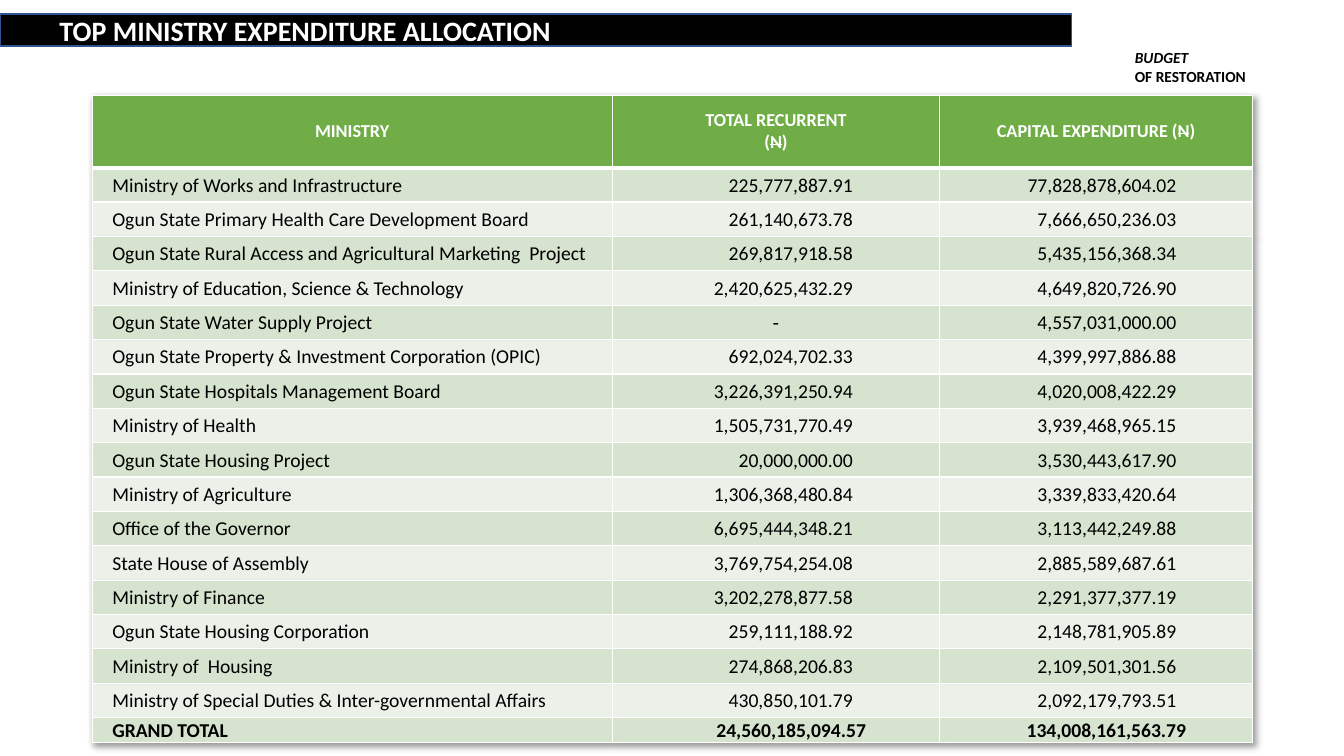
import pptx
import pptx.dml.color
import pptx.enum.shapes
import pptx.enum.text
import pptx.oxml
import pptx.oxml.ns
import pptx.util

Pt = pptx.util.Pt
RGBColor = pptx.dml.color.RGBColor
ALIGN = pptx.enum.text.PP_ALIGN
ANCHOR = pptx.enum.text.MSO_ANCHOR

BLACK = RGBColor(0x00, 0x00, 0x00)
WHITE = RGBColor(0xFF, 0xFF, 0xFF)
HEADER_GREEN = RGBColor(0x70, 0xAD, 0x47)
BAND_DARK = RGBColor(0xD5, 0xE3, 0xCF)
BAND_LIGHT = RGBColor(0xEB, 0xF1, 0xE9)
BANNER_EDGE = RGBColor(0x32, 0x54, 0x91)

NAMESPACE = pptx.oxml.ns.nsdecls("a")
COLUMN_WIDTHS = (371.5, 234, 223.2)
HEADER_HEIGHT, ROW_HEIGHT, TOTAL_HEIGHT = 51.8, 24.55, 18
AMOUNT_MARGINS = (62, 54)
TOTAL_MARGINS = (52.5, 47)

HEADERS = (
    (("MINISTRY",),),
    (("TOTAL RECURRENT",), ("(", "N", ")")),
    (("CAPITAL EXPENDITURE (", "N", ")"),),
)
ALLOCATIONS = (
    ("Ministry of Works and Infrastructure", "225,777,887.91", "77,828,878,604.02"),
    ("Ogun State Primary Health Care Development Board", "261,140,673.78", "7,666,650,236.03"),
    ("Ogun State Rural Access and Agricultural Marketing  Project", "269,817,918.58", "5,435,156,368.34"),
    ("Ministry of Education, Science & Technology", "2,420,625,432.29", "4,649,820,726.90"),
    ("Ogun State Water Supply Project", "-", "4,557,031,000.00"),
    ("Ogun State Property & Investment Corporation (OPIC)", "692,024,702.33", "4,399,997,886.88"),
    ("Ogun State Hospitals Management Board", "3,226,391,250.94", "4,020,008,422.29"),
    ("Ministry of Health", "1,505,731,770.49", "3,939,468,965.15"),
    ("Ogun State Housing Project", "20,000,000.00", "3,530,443,617.90"),
    ("Ministry of Agriculture", "1,306,368,480.84", "3,339,833,420.64"),
    ("Office of the Governor", "6,695,444,348.21", "3,113,442,249.88"),
    ("State House of Assembly", "3,769,754,254.08", "2,885,589,687.61"),
    ("Ministry of Finance", "3,202,278,877.58", "2,291,377,377.19"),
    ("Ogun State Housing Corporation", "259,111,188.92", "2,148,781,905.89"),
    ("Ministry of  Housing", "274,868,206.83", "2,109,501,301.56"),
    ("Ministry of Special Duties & Inter-governmental Affairs", "430,850,101.79", "2,092,179,793.51"),
    ("GRAND TOTAL", "24,560,185,094.57", "134,008,161,563.79"),
)


def style_span(span, size, color, bold=False, italic=False, name="Calibri"):
    """Set the font of one run."""
    span.font.name = name
    span.font.size = Pt(size)
    span.font.bold = bold
    span.font.italic = italic
    span.font.color.rgb = color


def style_cell(cell, color, bottom_width=1):
    """Give a cell white borders, a fill and a middle anchor."""
    properties = cell._tc.get_or_add_tcPr()
    for side, width in (("L", 1), ("R", 1), ("T", 1), ("B", bottom_width)):
        properties.append(pptx.oxml.parse_xml(
            f'<a:ln{side} {NAMESPACE} w="{Pt(width)}"><a:solidFill>'
            f'<a:srgbClr val="{WHITE}"/></a:solidFill></a:ln{side}>'))
    cell.fill.solid()
    cell.fill.fore_color.rgb = color
    cell.vertical_anchor = ANCHOR.MIDDLE


def add_table_shadow(table):
    """Cast a soft shadow to the lower right of the table."""
    table._tbl.tblPr.insert(0, pptx.oxml.parse_xml(
        f'<a:effectLst {NAMESPACE}><a:outerShdw blurRad="50800" dist="38100" '
        'dir="2700000" algn="tl" rotWithShape="0"><a:prstClr val="black">'
        '<a:alpha val="40000"/></a:prstClr></a:outerShdw></a:effectLst>'))


def fill_header_cell(cell, lines):
    """Write a column heading, striking through the naira letter."""
    style_cell(cell, HEADER_GREEN, bottom_width=3)
    for index, pieces in enumerate(lines):
        frame = cell.text_frame
        para = frame.add_paragraph() if index else frame.paragraphs[0]
        para.alignment = ALIGN.CENTER
        for piece in pieces:
            span = para.add_run()
            span.text = piece
            style_span(span, 13, WHITE, bold=True)
            if piece == "N":
                span.font._element.set("strike", "sngStrike")


def fill_body_cell(cell, text, column, color, is_total):
    """Write a ministry name or an amount lined up on its right edge."""
    style_cell(cell, color)
    cell.margin_left = cell.margin_right = cell.margin_top = Pt(0.72)
    cell.margin_bottom = 0
    cell.text_frame.text = text
    para = cell.text_frame.paragraphs[0]
    is_dash = text == "-"
    if column == 0:
        cell.margin_left = Pt(14.4)
    elif is_dash:
        para.alignment = ALIGN.CENTER
    else:
        para.alignment = ALIGN.RIGHT
        margins = TOTAL_MARGINS if is_total else AMOUNT_MARGINS
        cell.margin_right = Pt(margins[column - 1])
        if is_total:
            cell.vertical_anchor = ANCHOR.BOTTOM
    style_span(para.runs[0], 14, BLACK, bold=is_total, name="Arial" if is_dash else "Calibri")


def add_allocation_table(page, left, top):
    """Build the expenditure table from its top left corner."""
    heights = (HEADER_HEIGHT, *[ROW_HEIGHT] * (len(ALLOCATIONS) - 1), TOTAL_HEIGHT)
    table = page.shapes.add_table(
        len(heights), len(COLUMN_WIDTHS), Pt(left), Pt(top),
        Pt(sum(COLUMN_WIDTHS)), Pt(sum(heights))).table
    for column, width in zip(table.columns, COLUMN_WIDTHS):
        column.width = Pt(width)
    for row, height in zip(table.rows, heights):
        row.height = Pt(height)
    add_table_shadow(table)
    for column, lines in enumerate(HEADERS):
        fill_header_cell(table.cell(0, column), lines)
    for row, allocation in enumerate(ALLOCATIONS, start=1):
        color = BAND_DARK if row % 2 else BAND_LIGHT
        for column, text in enumerate(allocation):
            fill_body_cell(table.cell(row, column), text, column, color, row == len(ALLOCATIONS))


def add_slogan(page, left, top, width, height):
    """Place the two-line budget slogan."""
    box = page.shapes.add_textbox(Pt(left), Pt(top), Pt(width), Pt(height))
    frame = box.text_frame
    frame.word_wrap = True
    frame.text = "BUDGET\nOF RESTORATION"
    for para, italic in zip(frame.paragraphs, (True, False)):
        style_span(para.runs[0], 11, BLACK, bold=True, italic=italic)


def add_title_banner(page, left, top, width, height):
    """Place the black title banner."""
    banner = page.shapes.add_shape(
        pptx.enum.shapes.MSO_SHAPE.ROUNDED_RECTANGLE, Pt(left), Pt(top), Pt(width), Pt(height))
    banner.adjustments[0] = 0
    banner.shadow.inherit = False
    banner.fill.solid()
    banner.fill.fore_color.rgb = BLACK
    banner.line.color.rgb = BANNER_EDGE
    banner.line.width = Pt(1)
    frame = banner.text_frame
    frame.word_wrap = True
    frame.vertical_anchor = ANCHOR.MIDDLE
    frame.margin_left = Pt(42.5)
    frame.margin_top = frame.margin_bottom = 0
    frame.text = "TOP MINISTRY EXPENDITURE ALLOCATION"
    para = frame.paragraphs[0]
    para.alignment = ALIGN.LEFT
    style_span(para.runs[0], 20, WHITE, bold=True)


def main():
    """Build and save the one-slide deck."""
    deck = pptx.Presentation()
    deck.slide_width, deck.slide_height = Pt(960), Pt(540)
    page = deck.slides.add_slide(deck.slide_layouts[6])
    add_allocation_table(page, 65.8, 68)
    add_slogan(page, 803.5, 31, 106, 34)
    add_title_banner(page, 0, 10, 765.5, 23)
    deck.save("out.pptx")


if __name__ == "__main__":
    main()
